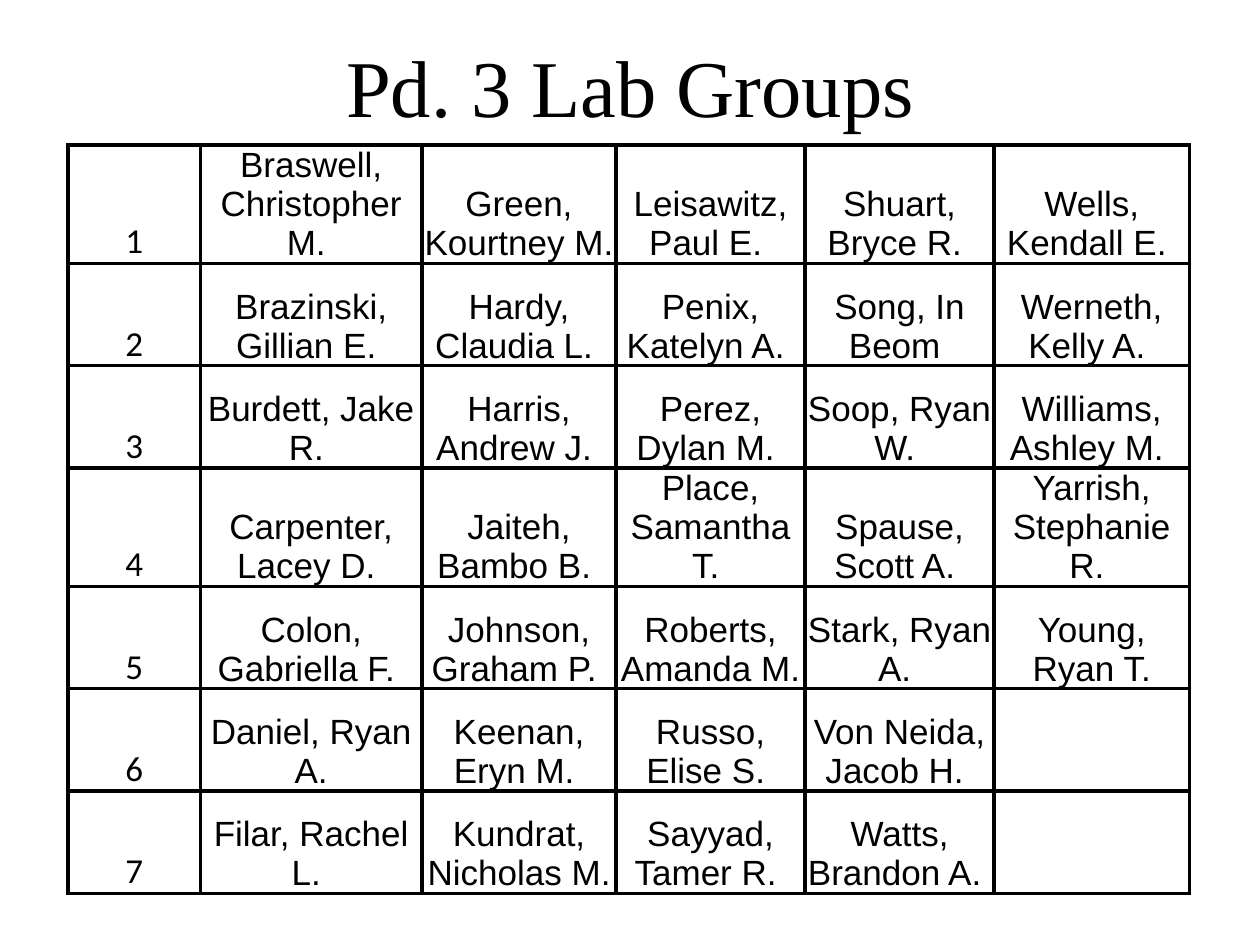
from dataclasses import dataclass

import pptx
import pptx.dml.color
import pptx.enum.text
import pptx.oxml
import pptx.oxml.ns
import pptx.util

Pt = pptx.util.Pt
BLACK = "000000"
BORDER_WIDTH = Pt(2.25)
COLUMN_WIDTHS = [75.6, 126.72, 110.88, 108, 108, 111.6]
ROW_HEIGHT = 58.5


@dataclass
class LabGroup:
    number: int
    members: list[str]


# A space after a name counts in its centring.
LAB_GROUPS = [
    LabGroup(1, ["Braswell, Christopher M. ", "Green, Kourtney M. ", "Leisawitz, Paul E. ",
                 "Shuart, Bryce R. ", "Wells, Kendall E. "]),
    LabGroup(2, ["Brazinski, Gillian E. ", "Hardy, Claudia L. ", "Penix, Katelyn A. ",
                 "Song, In Beom ", "Werneth, Kelly A. "]),
    LabGroup(3, ["Burdett, Jake R. ", "Harris, Andrew J. ", "Perez, Dylan M. ",
                 "Soop, Ryan W. ", "Williams, Ashley M. "]),
    LabGroup(4, ["Carpenter, Lacey D. ", "Jaiteh, Bambo B. ", "Place, Samantha T. ",
                 "Spause, Scott A. ", "Yarrish, Stephanie R. "]),
    LabGroup(5, ["Colon, Gabriella F. ", "Johnson, Graham P. ", "Roberts, Amanda M. ",
                 "Stark, Ryan A. ", "Young, Ryan T."]),
    LabGroup(6, ["Daniel, Ryan A.", "Keenan, Eryn M. ", "Russo, Elise S. ",
                 "Von Neida, Jacob H. "]),
    LabGroup(7, ["Filar, Rachel L. ", "Kundrat, Nicholas M. ", "Sayyad, Tamer R. ",
                 "Watts, Brandon A. "]),
]


def color(hex_code: str) -> pptx.dml.color.RGBColor:
    return pptx.dml.color.RGBColor.from_string(hex_code)


def add_centred_run(paragraph, text: str, font_name: str, size: float) -> None:
    paragraph.alignment = pptx.enum.text.PP_ALIGN.CENTER
    run = paragraph.add_run()
    run.text = text
    run.font.name = font_name
    run.font.size = Pt(size)
    run.font.color.rgb = color(BLACK)


def add_borders(cell) -> None:
    properties = cell._tc.get_or_add_tcPr()
    for position, side in enumerate(("lnL", "lnR", "lnT", "lnB")):
        # Borders must come before the fill in the cell properties.
        properties.insert(position, pptx.oxml.parse_xml(
            f'<a:{side} {pptx.oxml.ns.nsdecls("a")} w="{BORDER_WIDTH}">'
            f'<a:solidFill><a:srgbClr val="{BLACK}"/></a:solidFill></a:{side}>'))


def format_cell(cell) -> None:
    cell.fill.background()
    cell.vertical_anchor = pptx.enum.text.MSO_ANCHOR.BOTTOM
    cell.margin_left = cell.margin_right = cell.margin_top = Pt(0.7)
    cell.margin_bottom = Pt(0)
    add_borders(cell)


def add_title(slide) -> None:
    title = slide.shapes.title
    title.left, title.top, title.width, title.height = Pt(72), Pt(14.4), Pt(576), Pt(68.4)
    title.text_frame.vertical_anchor = pptx.enum.text.MSO_ANCHOR.MIDDLE
    add_centred_run(title.text_frame.paragraphs[0], "Pd. 3 Lab Groups", "Times New Roman", 46)


def add_group_table(slide, groups: list[LabGroup]) -> None:
    roster = slide.shapes.add_table(
        len(groups), len(COLUMN_WIDTHS), Pt(38.9), Pt(82.8),
        Pt(sum(COLUMN_WIDTHS)), Pt(ROW_HEIGHT * len(groups))).table
    roster.first_row = roster.horz_banding = False
    for column, width in zip(roster.columns, COLUMN_WIDTHS):
        column.width = Pt(width)
    for row, group in zip(roster.rows, groups):
        row.height = Pt(ROW_HEIGHT)
        for cell in row.cells:
            format_cell(cell)
        for index, text in enumerate([str(group.number), *group.members]):
            font_name = "Arial" if index else "Calibri"
            paragraph = row.cells[index].text_frame.paragraphs[0]
            add_centred_run(paragraph, text, font_name, 20)


def main() -> None:
    presentation = pptx.Presentation()
    presentation.slide_width, presentation.slide_height = Pt(720), Pt(540)
    slide = presentation.slides.add_slide(presentation.slide_layouts.get_by_name("Title Only"))
    add_title(slide)
    add_group_table(slide, LAB_GROUPS)
    presentation.save("out.pptx")


if __name__ == "__main__":
    main()
